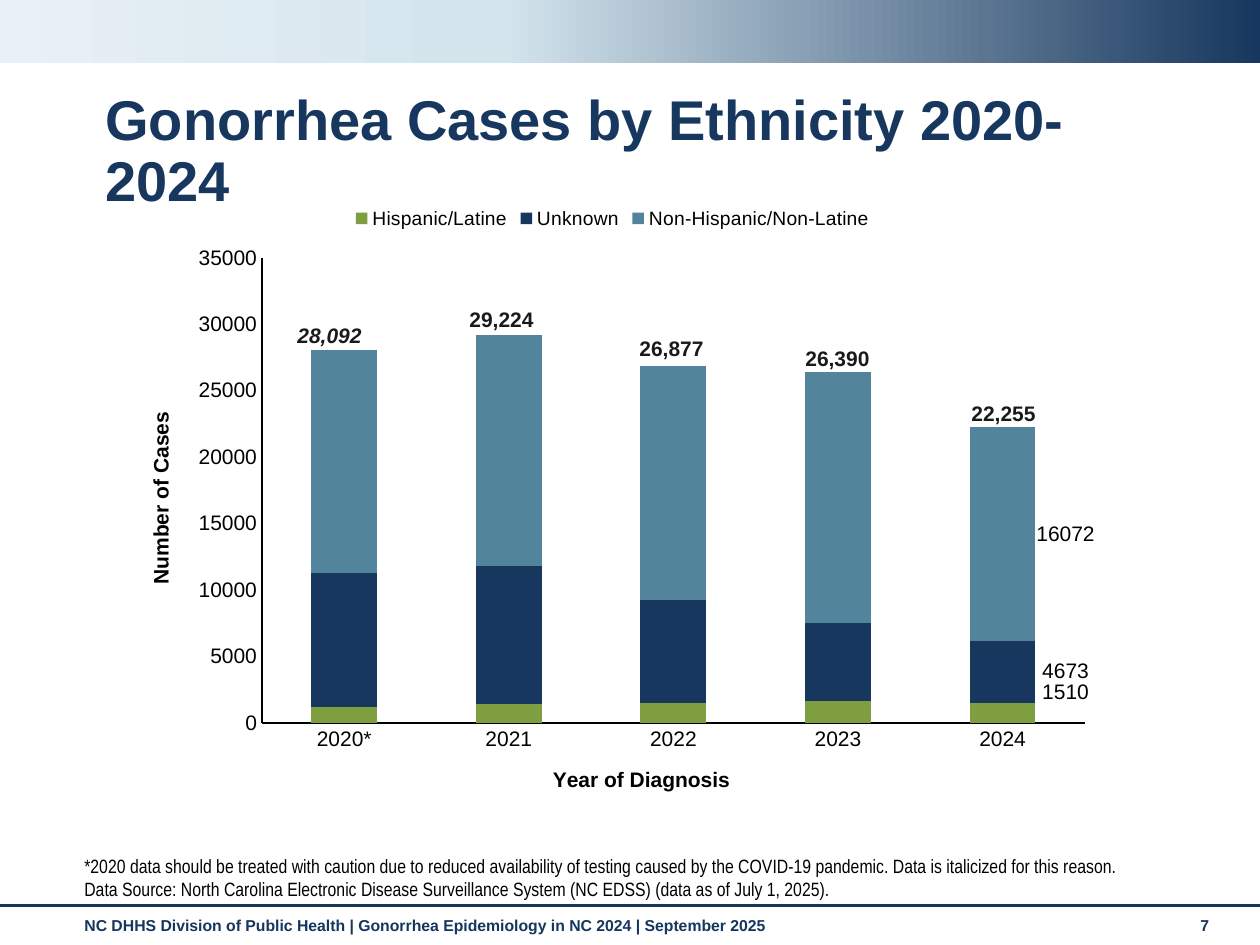
from copy import deepcopy
from dataclasses import dataclass

from lxml import etree
from pptx import Presentation
from pptx import util as u
from pptx.chart.data import CategoryChartData
from pptx.dml.color import RGBColor
from pptx.enum import chart as ch
from pptx.enum import shapes, text
from pptx.oxml import parse_xml
from pptx.oxml.ns import nsdecls, qn

EMU_PER_PX = 914400 / 126
NAVY, BLACK, CHARCOAL = "17375E", "000000", "1A1A1A"
FOOTER_BLUE = "15365E"
CHART_W, CHART_H = 984, 626
C15 = "http://schemas.microsoft.com/office/drawing/2012/chart"


@dataclass
class Series:
    name: str
    values: tuple[int, ...]
    color: str
    label_dy: int = 0


@dataclass
class Total:
    label: str
    x: int
    y: int
    italic: bool = False


YEARS = ("2020*", "2021", "2022", "2023", "2024")
SERIES = (
    Series("Hispanic/Latine", (1189, 1446, 1507, 1608, 1510), "7F9E3F", -21),
    Series("Unknown", (10114, 10333, 7729, 5938, 4673), NAVY),
    Series("Non-Hispanic/Non-Latine", (16789, 17445, 17641, 18844, 16072), "52849C"),
)
TOTALS = (
    Total("28,092", 268, 316, italic=True),
    Total("29,224", 440, 300),
    Total("26,877", 610, 329),
    Total("26,390", 776, 339),
    Total("22,255", 942, 394),
)
FOOTNOTES = (
    "*2020 data should be treated with caution due to reduced availability of testing "
    "caused by the COVID-19 pandemic. Data is italicized for this reason.",
    "Data Source: North Carolina Electronic Disease Surveillance System (NC EDSS) "
    "(data as of July 1, 2025).",
)


def px(n: int) -> u.Emu:
    return u.Emu(round(n * EMU_PER_PX))


def rgb(color: str) -> RGBColor:
    return RGBColor.from_string(color)


def style_font(font, size: int, color: str, name: str = "Arial",
               bold: bool = False, italic: bool = False) -> None:
    font.name, font.size = name, u.Pt(size)
    font.bold, font.italic = bold, italic
    font.color.rgb = rgb(color)


def add_text(slide, lines, x: int, y: int, w: int, h: int, size: int, color: str,
             align=text.PP_ALIGN.LEFT, anchor=text.MSO_ANCHOR.TOP,
             spacing: float = 1.0, **font) -> None:
    tf = slide.shapes.add_textbox(px(x), px(y), px(w), px(h)).text_frame
    tf.word_wrap = True
    tf.vertical_anchor = anchor
    tf.text = "\n".join(lines)
    for p in tf.paragraphs:
        p.alignment, p.line_spacing = align, spacing
        style_font(p.font, size, color, **font)


def add_banner(slide) -> None:
    sp = slide.shapes.add_shape(shapes.MSO_SHAPE.RECTANGLE, 0, 0, px(1260), px(63))
    sp.shadow.inherit = False
    sp.line.fill.background()
    sp.fill.gradient()
    sp.fill.gradient_angle = 0
    stop_list = sp._element.spPr.find(".//" + qn("a:gsLst"))
    stop_list.append(deepcopy(stop_list[-1]))
    for stop, (position, color) in zip(
            sp.fill.gradient_stops, ((0, "E9F1F6"), (0.4, "D3E4ED"), (1, NAVY))):
        stop.position = position
        stop.color.rgb = rgb(color)


def add_footer_rule(slide) -> None:
    line = slide.shapes.add_connector(
        shapes.MSO_CONNECTOR.STRAIGHT, 0, px(906), px(1260), px(906))
    line.line.color.rgb = rgb(NAVY)
    line.line.width = u.Pt(1.75)
    etree.SubElement(line._element.spPr, qn("a:effectLst"))


def set_layout(parent, index: int, inner: bool = False, edge: bool = True,
               **lengths: int) -> None:
    """Place a chart part, in px within the chart; edge=False makes x and y offsets."""
    for old in parent.findall(qn("c:layout")):
        parent.remove(old)
    target = '<c:layoutTarget val="inner"/>' if inner else ""
    modes = '<c:xMode val="edge"/><c:yMode val="edge"/>' if edge else ""
    values = "".join(
        f'<c:{side} val="{n / (CHART_W if side in "xw" else CHART_H):.4f}"/>'
        for side, n in lengths.items())
    parent.insert(index, parse_xml(
        f"<c:layout {nsdecls('c')}><c:manualLayout>{target}{modes}{values}"
        "</c:manualLayout></c:layout>"))


def hide_leader_lines(d_lbls) -> None:
    for old in d_lbls.findall(qn("c:showLeaderLines")):
        old.set("val", "0")
    d_lbls.append(parse_xml(
        f'<c:extLst {nsdecls("c")}><c:ext xmlns:c15="{C15}" '
        'uri="{CE6537A1-D6FC-4f65-9D91-7224C49458BB}">'
        '<c15:showLeaderLines val="0"/></c:ext></c:extLst>'))


def style_axis(axis, title: str, x: int, y: int) -> None:
    axis.has_major_gridlines = False
    axis.major_tick_mark = axis.minor_tick_mark = ch.XL_TICK_MARK.NONE
    axis.format.line.color.rgb = rgb(BLACK)
    axis.format.line.width = u.Pt(0.75)
    style_font(axis.tick_labels.font, 12, BLACK)
    tf = axis.axis_title.text_frame
    tf.text = title
    style_font(tf.paragraphs[0].font, 12, BLACK, bold=True)
    set_layout(axis.axis_title._element, 1, x=x, y=y)


def add_cases_chart(slide) -> None:
    data = CategoryChartData(number_format="########0")
    data.categories = YEARS
    for s in SERIES:
        data.add_series(s.name, s.values)
    chart = slide.shapes.add_chart(ch.XL_CHART_TYPE.COLUMN_STACKED, px(121), px(193),
                                   px(CHART_W), px(CHART_H), data).chart
    style_font(chart.font, 10, BLACK)
    chart.has_title = False
    set_layout(chart._chartSpace.chart.plotArea, 0, inner=True, x=141, y=65, w=823, h=465)

    chart.has_legend = True
    chart.legend.position = ch.XL_LEGEND_POSITION.TOP
    chart.legend.include_in_layout = False
    style_font(chart.legend.font, 11, BLACK)
    set_layout(chart.legend._element, 1, x=228, y=13, w=527, h=25)

    style_axis(chart.category_axis, "Year of Diagnosis", 428, 570)
    axis = chart.value_axis
    style_axis(axis, "Number of Cases", 23, 215)
    axis.axis_title.text_frame._txBody.bodyPr.set("rot", "-5400000")
    axis.minimum_scale, axis.maximum_scale, axis.major_unit = 0, 35000, 5000
    axis.tick_labels.number_format = "########0"
    axis.tick_labels.number_format_is_linked = False

    plot = chart.plots[0]
    plot.gap_width, plot.overlap = 150, 100
    plot.vary_by_categories = False
    for s, series in zip(SERIES, plot.series):
        series.format.fill.solid()
        series.format.fill.fore_color.rgb = rgb(s.color)
        label = series.points[len(YEARS) - 1].data_label
        style_font(label.font, 12, BLACK)
        label.position = ch.XL_LABEL_POSITION.CENTER
        d_lbls = series._element.find(qn("c:dLbls"))
        set_layout(d_lbls.find(qn("c:dLbl")), 1, edge=False, x=63, y=s.label_dy)
        hide_leader_lines(d_lbls)


def main() -> None:
    prs = Presentation()
    prs.slide_width, prs.slide_height = px(1260), px(945)
    slide = prs.slides.add_slide(prs.slide_layouts[6])

    add_text(slide, ["NC DHHS Division of Public Health | Gonorrhea Epidemiology in NC 2024"
                     " | September 2025"], 72, 910, 1101, 37, 9, FOOTER_BLUE, bold=True)
    add_text(slide, ["7"], 1188, 910, 55, 37, 9, FOOTER_BLUE, bold=True)
    add_banner(slide)
    add_footer_rule(slide)
    add_text(slide, ["Gonorrhea Cases by Ethnicity 2020-2024"], 93, 86, 1081, 76,
             32, NAVY, spacing=0.9, bold=True)
    add_text(slide, FOOTNOTES, 72, 862, 1147, 45, 11, BLACK,
             anchor=text.MSO_ANCHOR.BOTTOM, name="Arial Narrow")
    add_cases_chart(slide)
    for t in TOTALS:
        add_text(slide, [t.label], t.x, t.y, 123, 38, 12, CHARCOAL,
                 align=text.PP_ALIGN.CENTER, bold=True, italic=t.italic)
    prs.save("out.pptx")


if __name__ == "__main__":
    main()
